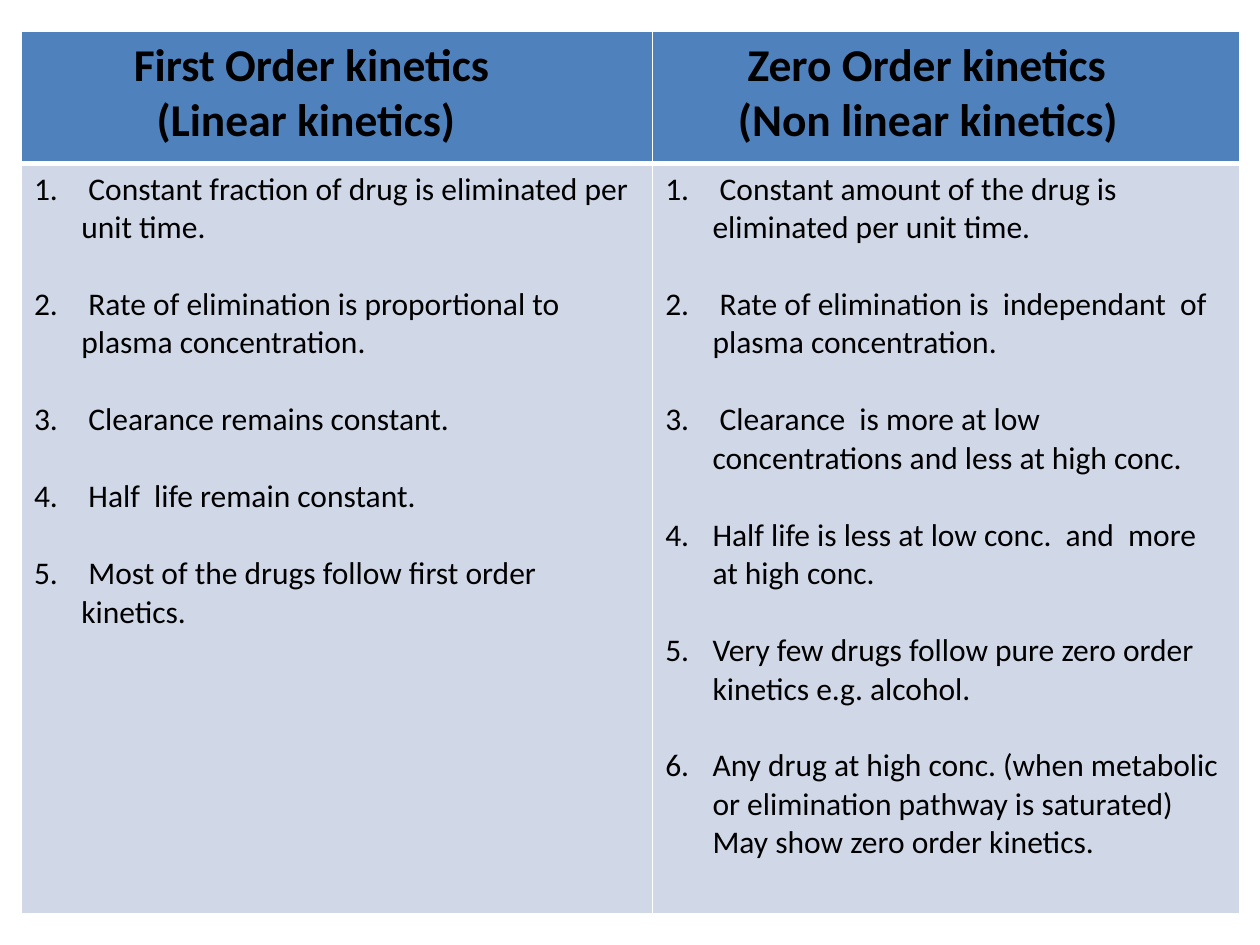
import pptx
import pptx.util
import pptx.dml.color
import pptx.oxml.ns
from lxml import etree

Pt = pptx.util.Pt
COLORS = {"header": "4F81BD", "body": "D0D8E8", "rule": "FFFFFF", "text": "000000"}
COLUMNS = [
    {
        "width": 360.72,
        "heading": [("First Order kinetics", 57), ("(Linear kinetics)", 70)],
        "points": [
            " Constant fraction of drug is eliminated per unit time.",
            " Rate of elimination is proportional to plasma concentration.",
            " Clearance remains constant.",
            " Half  life remain constant.",
            " Most of the drugs follow first order kinetics.",
        ],
    },
    {
        "width": 335.52,
        "heading": [("Zero Order kinetics", 47), ("(Non linear kinetics)", 41.5)],
        "points": [
            " Constant amount of the drug is eliminated per unit time.",
            " Rate of elimination is  independant  of plasma concentration.",
            " Clearance  is more at low concentrations and less at high conc.",
            "Half life is less at low conc.  and  more at high conc.",
            "Very few drugs follow pure zero order kinetics e.g. alcohol.",
            "Any drug at high conc. (when metabolic or elimination pathway is saturated)  "
            "May show zero order kinetics.",
        ],
    },
]


def rgb(name):
    return pptx.dml.color.RGBColor.from_string(COLORS[name])


def add_element(parent, tag, **attributes):
    return etree.SubElement(parent, pptx.oxml.ns.qn(tag), **attributes)


def add_text(frame, text, first=False, size=18, bold=False, indent=0, hanging=0,
             before=0, numbered=False):
    para = frame.paragraphs[0] if first else frame.add_paragraph()
    properties = para._p.get_or_add_pPr()
    properties.set("marL", str(Pt(indent)))
    properties.set("indent", str(Pt(-hanging)))
    if numbered:
        add_element(properties, "a:buFont", typeface="+mj-lt")
        add_element(properties, "a:buAutoNum", type="arabicPeriod")
    para.space_before = Pt(0 if first else before)
    span = para.add_run()
    span.text = text
    span.font.name = "Calibri"
    span.font.size = Pt(size)
    span.font.bold = bold
    span.font.color.rgb = rgb("text")


def style_cell(cell, fill, top=1, bottom=1):
    properties = cell._tc.get_or_add_tcPr()
    for tag, width in (("a:lnL", 1), ("a:lnR", 1), ("a:lnT", top), ("a:lnB", bottom)):
        line = add_element(properties, tag, w=str(Pt(width)))
        add_element(add_element(line, "a:solidFill"), "a:srgbClr", val=COLORS["rule"])
    cell.fill.solid()
    cell.fill.fore_color.rgb = rgb(fill)


def add_comparison(page, left, top, width, height, header_height):
    table = page.shapes.add_table(
        2, len(COLUMNS), Pt(left), Pt(top), Pt(width), Pt(height)).table
    table.horz_banding = False
    table.rows[0].height = Pt(header_height)
    table.rows[1].height = Pt(height - header_height)
    for index, column in enumerate(COLUMNS):
        table.columns[index].width = Pt(column["width"])
        heading, body = table.cell(0, index), table.cell(1, index)
        style_cell(heading, "header", bottom=3)
        style_cell(body, "body", top=3)
        for order, (text, indent) in enumerate(column["heading"]):
            add_text(heading.text_frame, text, first=order == 0, size=26, bold=True,
                     indent=indent)
        for order, text in enumerate(column["points"]):
            add_text(body.text_frame, text, first=order == 0, indent=27, hanging=27,
                     before=22, numbered=True)


def main():
    deck = pptx.Presentation()
    deck.slide_width, deck.slide_height = Pt(720), Pt(540)
    page = deck.slides.add_slide(deck.slide_layouts[6])
    add_comparison(page, 12.24, 18, 696.24, 504, 75.6)
    deck.save("out.pptx")


if __name__ == "__main__":
    main()
